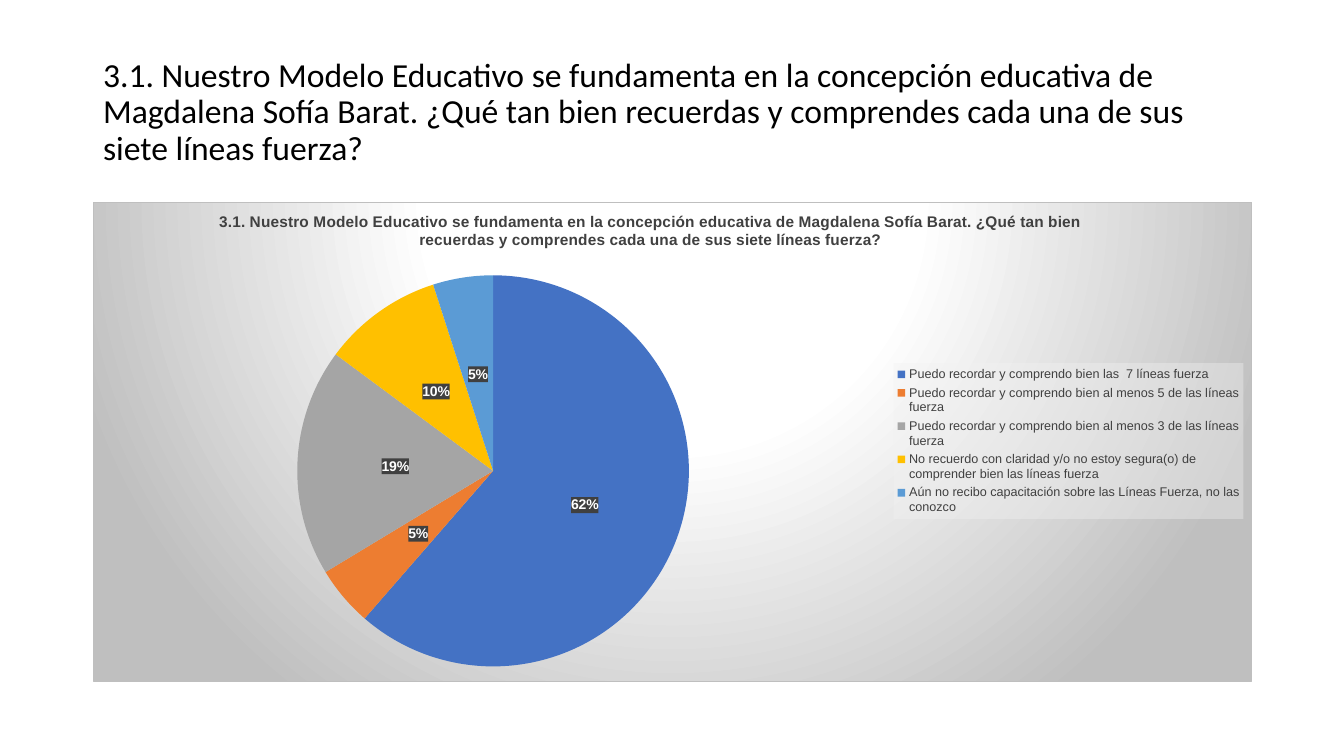
from lxml.etree import fromstring
from pptx import Presentation
from pptx.chart.data import CategoryChartData as ChartData
from pptx.dml.color import RGBColor as Color
from pptx.enum.chart import XL_CHART_TYPE as ChartType
from pptx.enum.chart import XL_LABEL_POSITION as LabelPosition
from pptx.enum.chart import XL_LEGEND_POSITION as LegendPosition
from pptx.enum.text import MSO_ANCHOR as Anchor
from pptx.oxml.ns import qn
from pptx.util import Pt

SCALE = 914400 / 100.8
NAMESPACES = (
    'xmlns:c="http://schemas.openxmlformats.org/drawingml/2006/chart" '
    'xmlns:a="http://schemas.openxmlformats.org/drawingml/2006/main"'
)
COLORS = {
    "black": "000000",
    "white": "FFFFFF",
    "dark": "404040",
    "pale": "F2F2F2",
    "edge": "BFBFBF",
}
QUESTION = (
    "3.1. Nuestro Modelo Educativo se fundamenta en la concepción educativa de "
    "Magdalena Sofía Barat. ¿Qué tan bien recuerdas y comprendes cada una de sus "
    "siete líneas fuerza?"
)
ANSWERS = [
    ("Puedo recordar y comprendo bien las  7 líneas fuerza", 62, "4472C4"),
    ("Puedo recordar y comprendo bien al menos 5 de las líneas fuerza", 5, "ED7D31"),
    ("Puedo recordar y comprendo bien al menos 3 de las líneas fuerza", 19, "A5A5A5"),
    ("No recuerdo con claridad y/o no estoy segura(o) de comprender bien las líneas fuerza",
     10, "FFC000"),
    ("Aún no recibo capacitación sobre las Líneas Fuerza, no las conozco", 5, "5B9BD5"),
]


def px(length):
    return round(length * SCALE)


def style_font(font, size, color, name="Arial", bold=False):
    font.size = Pt(size)
    font.name = name
    font.bold = bold
    font.color.rgb = Color.from_string(COLORS[color])


def write_text(frame, text, **style):
    para = frame.paragraphs[0]
    span = para.add_run()
    span.text = text
    style_font(span.font, **style)
    return para


def solid(color, alpha):
    return (f'<a:solidFill><a:srgbClr val="{COLORS[color]}">'
            f'<a:alpha val="{alpha * 1000}"/></a:srgbClr></a:solidFill>')


def radial(stops):
    marks = "".join(f'<a:gs pos="{place * 1000}"><a:srgbClr val="{COLORS[color]}"/></a:gs>'
                    for place, color in stops)
    return (f'<a:gradFill><a:gsLst>{marks}</a:gsLst><a:path path="circle">'
            '<a:fillToRect l="50000" t="-80000" r="50000" b="180000"/></a:path></a:gradFill>')


def shape_format(fill, line="<a:ln><a:noFill/></a:ln>"):
    return fromstring(f"<c:spPr {NAMESPACES}>{fill}{line}</c:spPr>")


def manual_layout(chart, left, top, width=None, height=None, inner=False):
    total_width, total_height = 1159, 480
    parts = {"x": left / total_width, "y": top / total_height}
    if width:
        parts.update(w=width / total_width, h=height / total_height)
    target = '<c:layoutTarget val="inner"/>' if inner else ""
    modes = "".join(f'<c:{axis}Mode val="edge"/>' for axis in "xy")
    values = "".join(f'<c:{key} val="{value:.4f}"/>' for key, value in parts.items())
    return fromstring(f"<c:layout {NAMESPACES}><c:manualLayout>{target}{modes}{values}"
                      "</c:manualLayout></c:layout>")


def place_part(element, layout, after=None):
    for old in element.findall(qn("c:layout")):
        element.remove(old)
    if after:
        element.find(qn(after)).addnext(layout)
    else:
        element.insert(0, layout)


class SlideBuilder:
    def __init__(self, deck):
        self.page = deck.slides.add_slide(deck.slide_layouts[5])

    def title(self, text, left, top, width, height):
        box = self.page.shapes.title
        box.left, box.top, box.width, box.height = map(px, (left, top, width, height))
        frame = box.text_frame
        frame.word_wrap = True
        frame.vertical_anchor = Anchor.MIDDLE
        para = write_text(frame, text, size=24, color="black", name="Calibri")
        para.line_spacing = 0.9
        para._p.get_or_add_pPr().set("algn", "l")

    def pie(self, heading, answers, left, top, width, height):
        data = ChartData()
        data.categories = [label for label, _, _ in answers]
        data.add_series("Series 1", [share for _, share, _ in answers])
        chart = self.page.shapes.add_chart(
            ChartType.PIE, *map(px, (left, top, width, height)), data).chart
        style_font(chart.font, 10, "black")
        border = (f'<a:ln w="9525"><a:solidFill><a:srgbClr val="{COLORS["edge"]}"/>'
                  "</a:solidFill></a:ln>")
        background = radial([(0, "white"), (39, "white"), (100, "edge")])
        chart._chartSpace.find(qn("c:txPr")).addprevious(shape_format(background, border))
        self.heading(chart, heading)
        self.slices(chart, answers)
        self.legend(chart)

    def heading(self, chart, text):
        title = chart.chart_title
        write_text(title.text_frame, text, size=11, color="dark", bold=True)
        title.include_in_layout = False
        place_part(title._element, manual_layout(chart, 123, 6), after="c:tx")

    def slices(self, chart, answers):
        plot = chart.plots[0]
        plot.vary_by_categories = True
        place_part(chart._chartSpace.chart.plotArea,
                   manual_layout(chart, 204, 73, 392, 392, inner=True))
        for index, (_, _, color) in enumerate(answers):
            fill = plot.series[0].points[index].format.fill
            fill.solid()
            fill.fore_color.rgb = Color.from_string(color)
        labels = plot.series[0].data_labels
        labels.show_value = True
        labels.number_format = '0"%"'
        labels.number_format_is_linked = False
        labels.position = LabelPosition.CENTER
        style_font(labels.font, 10, "white", bold=True)
        labels._element.find(qn("c:txPr")).addprevious(shape_format(solid("dark", 90)))

    def legend(self, chart):
        chart.has_legend = True
        legend = chart.legend
        legend.position = LegendPosition.RIGHT
        legend.include_in_layout = False
        style_font(legend.font, 9, "dark")
        element = legend._element
        place_part(element, manual_layout(chart, 801, 161, 350, 156), after="c:legendPos")
        element.find(qn("c:txPr")).addprevious(shape_format(solid("pale", 39)))


def main():
    deck = Presentation()
    deck.slide_width, deck.slide_height = px(1344), px(756)
    slide = SlideBuilder(deck)
    slide.title(QUESTION, 93, 40, 1159, 146)
    slide.pie(QUESTION, ANSWERS, 93, 202, 1159, 480)
    deck.save("out.pptx")


if __name__ == "__main__":
    main()
